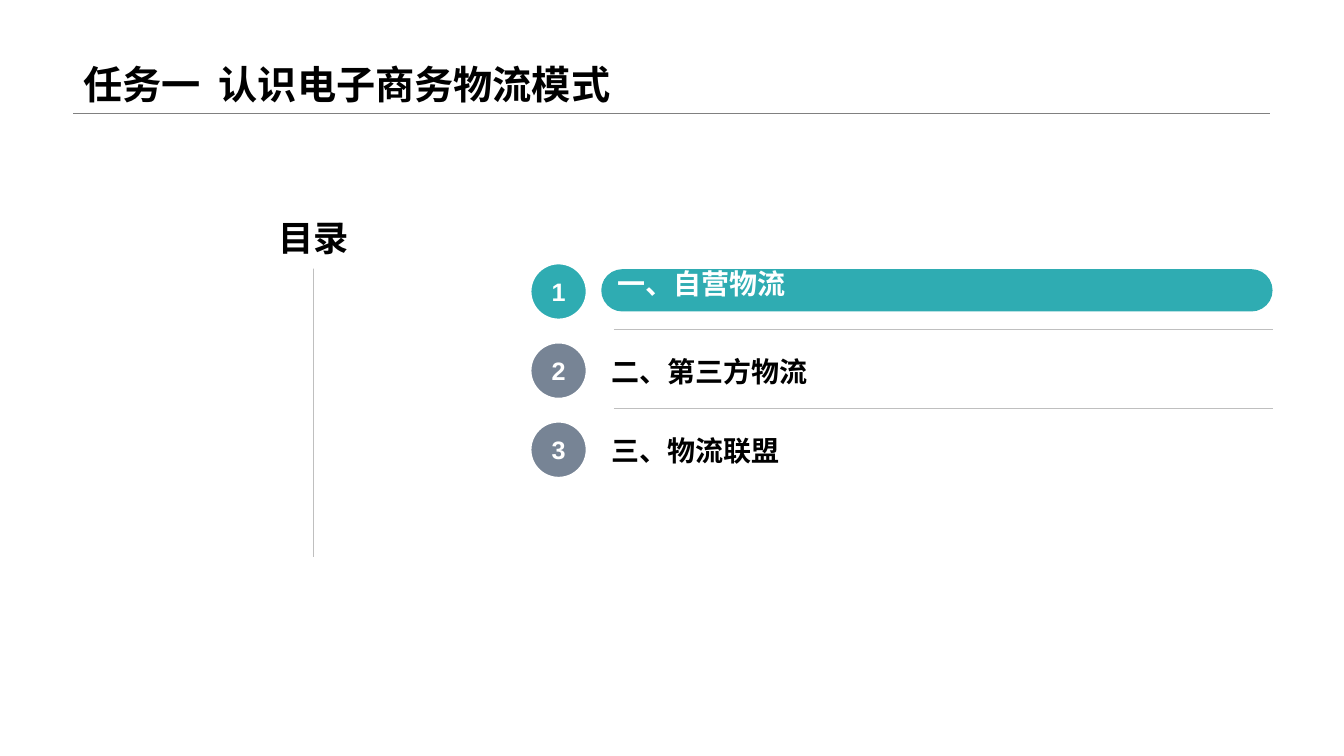
"""Build the contents slide for the e-commerce logistics modes task."""
from lxml.etree import SubElement
from pptx import Presentation
from pptx.dml.color import RGBColor
from pptx.enum.shapes import MSO_CONNECTOR, MSO_SHAPE
from pptx.enum.text import MSO_ANCHOR, MSO_AUTO_SIZE, PP_ALIGN
from pptx.oxml.ns import qn
from pptx.util import Pt

TITLE = "任务一  认识电子商务物流模式"
HEADING = "目录"
TOPICS = ["一、自营物流", "二、第三方物流", "三、物流联盟"]
ACTIVE = 0

TEAL = RGBColor(0x2F, 0xAC, 0xB2)
SLATE = RGBColor(0x77, 0x84, 0x95)
GRAY = RGBColor(0x80, 0x80, 0x80)
LIGHT_GRAY = RGBColor(0xBF, 0xBF, 0xBF)
BLACK = RGBColor(0, 0, 0)
WHITE = RGBColor(0xFF, 0xFF, 0xFF)

MARGIN, TITLE_W, TITLE_H = 52.5, 854.5, 80.6
CIRCLE_X, CIRCLE_D = 378.5, 41
ROW_TOP, ROW_PITCH = 187.75, 56.5
LABEL_X, LABEL_W, LABEL_H = 429.5, 479.5, 30.25
DIVIDER_X, DIVIDER_DROP = 438.5, 47.5


def write(sp, text, size, color, align=PP_ALIGN.LEFT, anchor=MSO_ANCHOR.BOTTOM, spacing=1.0):
    tf = sp.text_frame
    tf.text = text
    tf.word_wrap = True
    tf.auto_size = MSO_AUTO_SIZE.NONE
    tf.vertical_anchor = anchor
    p = tf.paragraphs[0]
    p.alignment = align
    p.line_spacing = spacing
    font = p.runs[0].font
    font.name, font.size, font.bold = "Arial", Pt(size), True
    font.color.rgb = color


def add_filled(s, kind, x, y, w, h, fill, border=None):
    sp = s.shapes.add_shape(kind, Pt(x), Pt(y), Pt(w), Pt(h))
    sp.shadow.inherit = False
    sp.fill.solid()
    sp.fill.fore_color.rgb = fill
    if border is None:
        sp.line.fill.background()
    else:
        sp.line.color.rgb = border
        sp.line.width = Pt(2.25)
    return sp


def add_rule(s, x1, y1, x2, y2, color):
    line = s.shapes.add_connector(MSO_CONNECTOR.STRAIGHT, Pt(x1), Pt(y1), Pt(x2), Pt(y2))
    line.line.color.rgb = color
    line.line.width = Pt(0.25)
    SubElement(line._element.spPr, qn("a:effectLst"))


def add_topic(s, i, topic):
    active = i == ACTIVE
    top = ROW_TOP + i * ROW_PITCH
    circle = add_filled(s, MSO_SHAPE.OVAL, CIRCLE_X, top, CIRCLE_D, CIRCLE_D,
                        TEAL if active else SLATE, WHITE)
    write(circle, str(i + 1), 18, WHITE, PP_ALIGN.CENTER, MSO_ANCHOR.MIDDLE)
    if active:
        label = add_filled(s, MSO_SHAPE.ROUNDED_RECTANGLE, LABEL_X, top + 4.5,
                           LABEL_W, LABEL_H, TEAL)
        label.adjustments[0] = 0.5
        write(label, topic, 20, WHITE, spacing=1.1)
    else:
        label = s.shapes.add_textbox(Pt(LABEL_X), Pt(top + 6.5), Pt(LABEL_W), Pt(LABEL_H))
        write(label, topic, 20, BLACK)
    if i < len(TOPICS) - 1:
        y = top + DIVIDER_DROP
        add_rule(s, DIVIDER_X, y, LABEL_X + LABEL_W, y, LIGHT_GRAY)


def main():
    prs = Presentation()
    prs.slide_width, prs.slide_height = Pt(960), Pt(540)
    s = prs.slides.add_slide(prs.slide_layouts[5])

    title = s.shapes.title
    title.left, title.top = Pt(MARGIN), Pt(0)
    title.width, title.height = Pt(TITLE_W), Pt(TITLE_H)
    write(title, TITLE, 28, BLACK, spacing=0.9)
    add_rule(s, MARGIN, TITLE_H, MARGIN + TITLE_W, TITLE_H, GRAY)

    add_rule(s, 223.5, 155, 223.5, 398, LIGHT_GRAY)
    heading = add_filled(s, MSO_SHAPE.RECTANGLE, 119, 151, 137.5, 41, WHITE)
    write(heading, HEADING, 25.2, BLACK, PP_ALIGN.RIGHT, MSO_ANCHOR.TOP)

    for i, topic in enumerate(TOPICS):
        add_topic(s, i, topic)

    prs.save("out.pptx")


if __name__ == "__main__":
    main()
